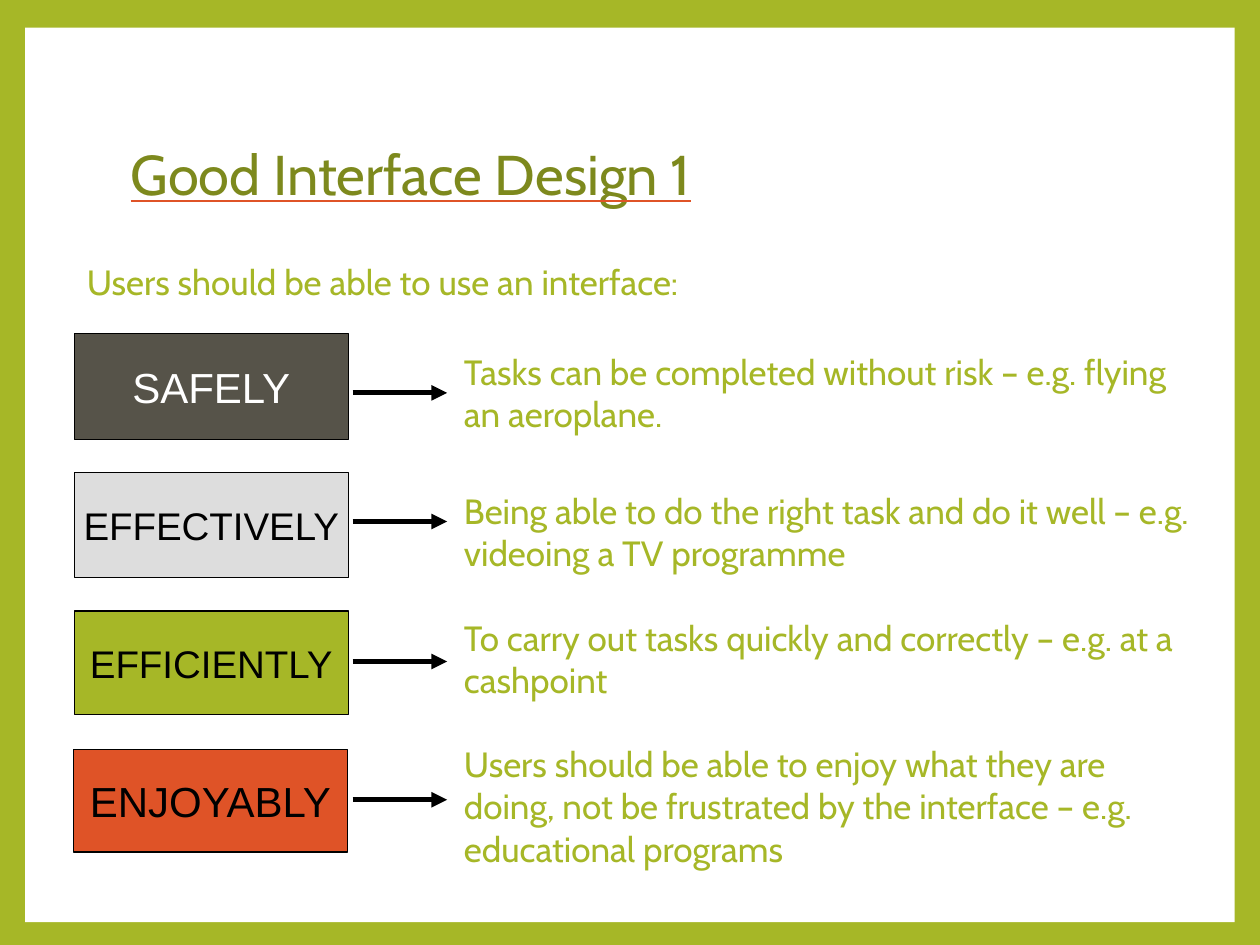
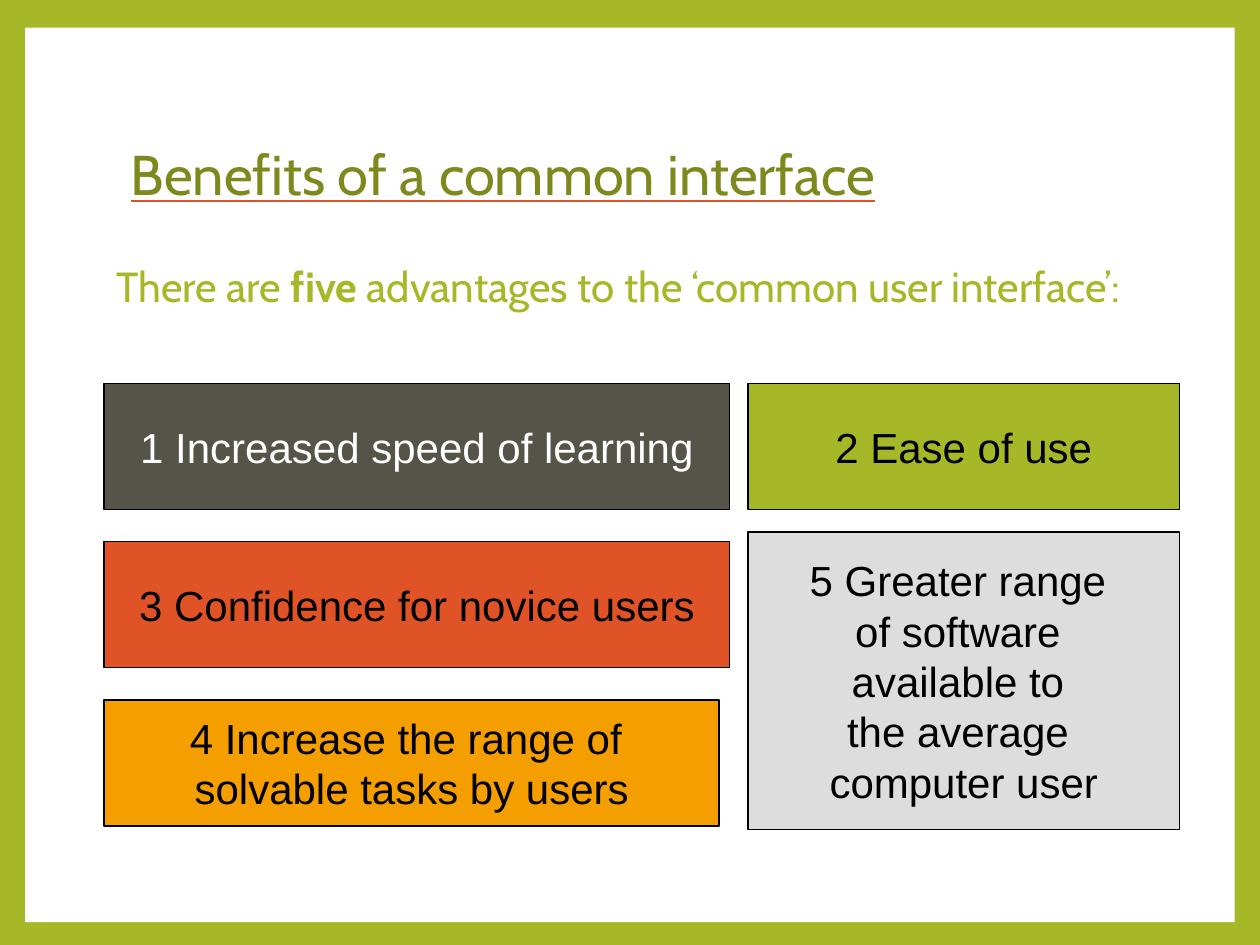
import pptx
import pptx.dml.color
import pptx.enum.shapes
import pptx.enum.text
import pptx.oxml
import pptx.oxml.ns
import pptx.util

Pt = pptx.util.Pt
RGB = pptx.dml.color.RGBColor
ALIGN = pptx.enum.text.PP_ALIGN
ANCHOR = pptx.enum.text.MSO_ANCHOR
RECTANGLE = pptx.enum.shapes.MSO_SHAPE.RECTANGLE
STRAIGHT = pptx.enum.shapes.MSO_CONNECTOR.STRAIGHT
DRAWING_NS = pptx.oxml.ns.nsdecls("a")

LIME = RGB(0xA6, 0xB7, 0x27)
OLIVE = RGB(0x7D, 0x89, 0x1D)
STONE = RGB(0x56, 0x53, 0x49)
SILVER = RGB(0xDD, 0xDD, 0xDD)
RUST = RGB(0xDF, 0x53, 0x27)
AMBER = RGB(0xF5, 0x9E, 0x00)
WHITE = RGB(0xFF, 0xFF, 0xFF)
BLACK = RGB(0, 0, 0)


def write(shape, text, size=20, font="Cabin", color=LIME, align=ALIGN.LEFT,
          anchor=ANCHOR.TOP, wrap=True, spacing=None, underline=None):
    frame = shape.text_frame
    frame.word_wrap = wrap
    frame.vertical_anchor = anchor
    for line_number, line in enumerate(text.split("\n")):
        paragraph = frame.add_paragraph() if line_number else frame.paragraphs[0]
        paragraph.alignment = align
        paragraph.line_spacing = spacing
        for part_number, part in enumerate(line.split("*")):
            run = paragraph.add_run()
            run.text = part
            run.font.size = Pt(size)
            run.font.name = font
            run.font.bold = part_number % 2 == 1
            run.font.color.rgb = color
            if underline is not None:
                run.font.underline = True
                run.font.fill._xPr.find(pptx.oxml.ns.qn("a:solidFill")).addnext(
                    pptx.oxml.parse_xml(
                        f'<a:uFill {DRAWING_NS}><a:solidFill><a:srgbClr val="{underline}"/>'
                        "</a:solidFill></a:uFill>"))


def add_card(slide, left, top, width, height, fill, text, size=24):
    card = slide.shapes.add_shape(RECTANGLE, Pt(left), Pt(top), Pt(width), Pt(height))
    card.shadow.inherit = False
    card.fill.solid()
    card.fill.fore_color.rgb = fill
    card.line.color.rgb = BLACK
    card.line.width = Pt(0.75)
    write(card, text, size=size, font="Arial", color=WHITE if fill == STONE else BLACK,
          align=ALIGN.CENTER, anchor=ANCHOR.MIDDLE, wrap=False)


deck = pptx.Presentation()
deck.slide_width, deck.slide_height = Pt(720), Pt(540)
backdrop = deck.slide_master.background.fill
backdrop.solid()
backdrop.fore_color.rgb = LIME
title_only = deck.slide_layouts[5]

design, benefits = [deck.slides.add_slide(title_only) for _ in range(2)]

panel = design.shapes.add_shape(RECTANGLE, Pt(14.4), Pt(15.84), Pt(691.2), Pt(511.2))
panel.shadow.inherit = False
panel.fill.solid()
panel.fill.fore_color.rgb = WHITE
panel.line.fill.background()
title_only.shapes._spTree.insert(2, panel._element)

for slide, heading in ((design, "Good Interface Design 1"),
                       (benefits, "Benefits of a common interface")):
    title = slide.shapes.title
    title.left, title.top, title.width, title.height = Pt(67.5), Pt(48), Pt(583), Pt(106.5)
    write(title, heading, size=32, color=OLIVE, anchor=ANCHOR.MIDDLE,
          spacing=0.9, underline=RUST)

qualities = [
    ("SAFELY", 24, STONE, 42.5, 60.5, 224.5, 196.5,
     "Tasks can be completed without risk – e.g. flying an aeroplane."),
    ("EFFECTIVELY", 22, SILVER, 42.5, 60, 298, 276,
     "Being able to do the right task and do it well – e.g. videoing a TV programme"),
    ("EFFICIENTLY", 22, LIME, 42.5, 59, 378, 349,
     "To carry out tasks quickly and correctly – e.g. at a cashpoint"),
    ("ENJOYABLY", 24, RUST, 42, 58.5, 457, 421,
     "Users should be able to enjoy what they are doing, not be frustrated by the "
     "interface – e.g. educational programs"),
]
for row, (quality, size, fill, left, height, arrow_y, meaning_top, meaning) in enumerate(qualities):
    add_card(design, left, 190.8 + 79.2 * row, 156.5, height, fill, quality, size)

    arrow = design.shapes.add_connector(STRAIGHT, Pt(201.5), Pt(arrow_y), Pt(255.5), Pt(arrow_y))
    arrow.line.color.rgb = BLACK
    arrow.line.width = Pt(3)
    arrow.line._get_or_add_ln().append(
        pptx.oxml.parse_xml(f'<a:tailEnd {DRAWING_NS} type="triangle"/>'))
    arrow._element.spPr.append(pptx.oxml.parse_xml(f"<a:effectLst {DRAWING_NS}/>"))

    explanation = design.shapes.add_textbox(
        Pt(258), Pt(meaning_top), Pt(432), Pt(79 if quality == "ENJOYABLY" else 55.5))
    write(explanation, meaning)

design_intro = design.shapes.add_textbox(Pt(42.5), Pt(145.5), Pt(666), Pt(31))
write(design_intro, "Users should be able to use an interface:")

advantages = [
    (59.5, 219, 357.5, 72, STONE, "1 Increased speed of learning"),
    (427.5, 219, 246.5, 72, LIME, "2 Ease of use"),
    (59.5, 309.5, 357.5, 72, RUST, "3 Confidence for novice users"),
    (59.5, 400, 351.5, 72, AMBER, "4 Increase the range of \nsolvable tasks by users"),
    (427.5, 304, 246.5, 170, SILVER,
     "5 Greater range \nof software \navailable to \nthe average \ncomputer user"),
]
for advantage in advantages:
    add_card(benefits, *advantage)

benefits_intro = benefits.shapes.add_textbox(Pt(59.5), Pt(145.5), Pt(608.5), Pt(36))
write(benefits_intro, "There are *five* advantages to the ‘common user interface’:",
      size=24, align=ALIGN.JUSTIFY)

deck.save("out.pptx")
